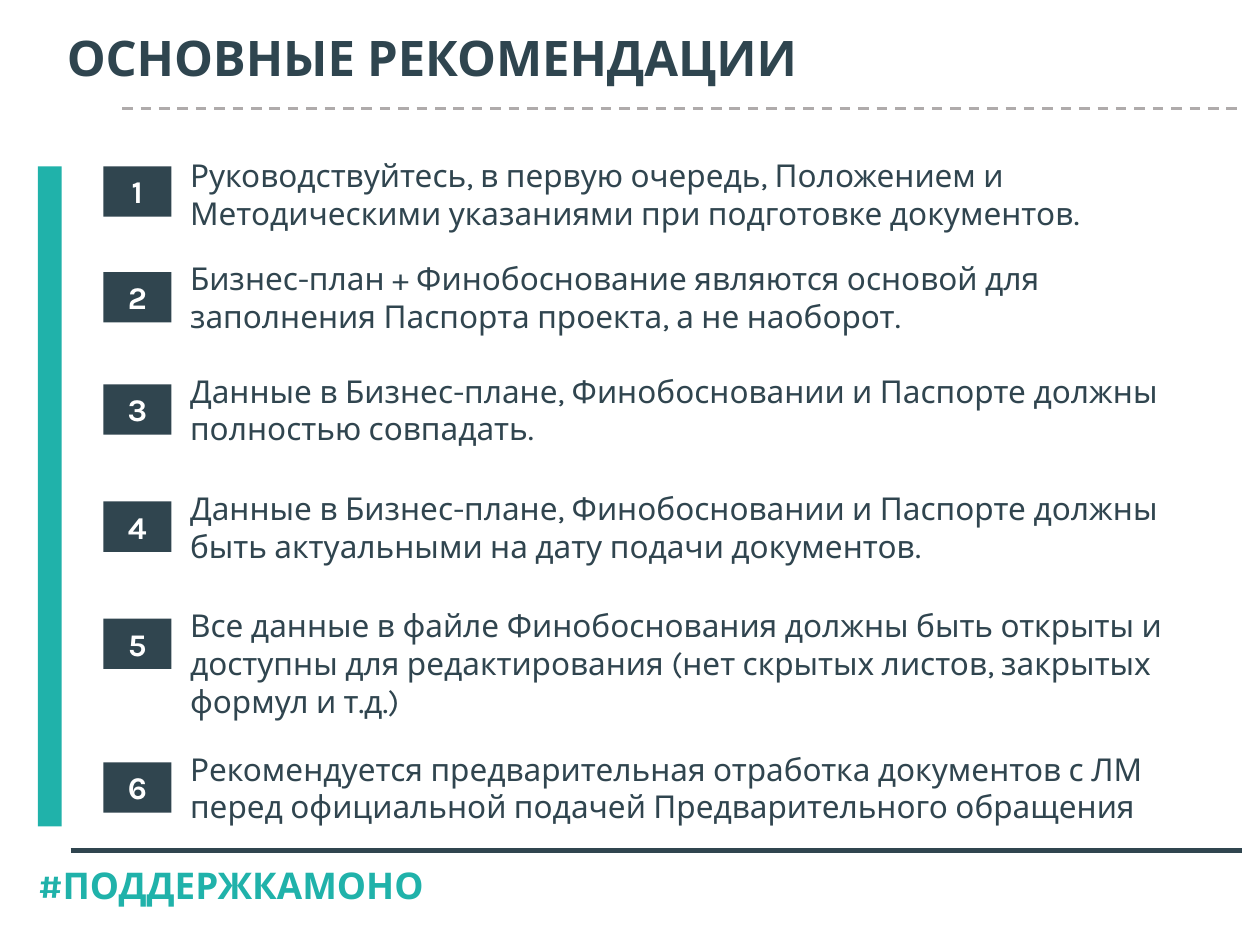
from pptx import Presentation
from pptx.dml.color import RGBColor
from pptx.enum.dml import MSO_LINE
from pptx.enum.shapes import MSO_CONNECTOR as Conn, MSO_SHAPE as Shape
from pptx.enum.text import MSO_ANCHOR as Anchor, MSO_AUTO_SIZE as Fit, PP_ALIGN as Align
from pptx.oxml.ns import qn
from pptx.util import Inches, Pt
from lxml.etree import SubElement

# Content
TITLE = "ОСНОВНЫЕ РЕКОМЕНДАЦИИ"
TAG = "#ПОДДЕРЖКАМОНО"
# (text top, text height, badge top, text)
TIPS = [
    (1.19, 0.71, 1.32, "Руководствуйтесь, в первую очередь, Положением и "
     "Методическими указаниями при подготовке документов."),
    (2.01, 0.71, 2.16, "Бизнес-план + Финобоснование являются основой для "
     "заполнения Паспорта проекта, а не наоборот."),
    (2.9, 0.71, 3.05, "Данные в Бизнес-плане, Финобосновании и Паспорте должны "
     "полностью совпадать."),
    (3.83, 0.71, 3.98, "Данные в Бизнес-плане, Финобосновании и Паспорте должны "
     "быть актуальными на дату подачи документов."),
    (4.76, 1.01, 4.91, "Все данные в файле Финобоснования должны быть открыты и "
     "доступны для редактирования (нет скрытых листов, закрытых формул и т.д.)"),
    (5.9, 0.71, 6.05, "Рекомендуется предварительная отработка документов с ЛМ "
     "перед официальной подачей Предварительного обращения"),
]

THEME = {
    "font": "Karla",
    "dark": "30454F", "title": "2F454F", "teal": "20B2AA",
    "grey": "AFABAB", "white": "FFFFFF",
    "head": 28, "tag": 21, "body": 18,
}
RIGHT = 9.86


def hue(name):
    return RGBColor.from_string(THEME[name])


def write(shape, text, size="body", color="dark", bold=False, align=Align.LEFT,
          anchor=Anchor.TOP, space=None, inset=None, wrap=True):
    frame = shape.text_frame
    frame.text = text
    frame.word_wrap = wrap
    frame.auto_size = Fit.NONE
    frame.vertical_anchor = anchor
    if inset is not None:
        frame.margin_left = frame.margin_right = Inches(inset)
        frame.margin_top = frame.margin_bottom = Inches(inset)
    para = frame.paragraphs[0]
    para.alignment = align
    if space:
        para.line_spacing = space
    font = para.runs[0].font
    font.name, font.size, font.bold = THEME["font"], Pt(THEME[size]), bold
    font.color.rgb = hue(color)


def add_box(slide, *area):
    return slide.shapes.add_textbox(*map(Inches, area))


def add_bar(slide, color, *area):
    bar = slide.shapes.add_shape(Shape.RECTANGLE, *map(Inches, area))
    bar.shadow.inherit = False
    bar.fill.solid()
    bar.fill.fore_color.rgb = hue(color)
    bar.line.fill.background()
    return bar


def add_rule(slide, left, top, color, width, dash=None):
    ends = map(Inches, (left, top, RIGHT, top))
    rule = slide.shapes.add_connector(Conn.STRAIGHT, *ends)
    rule.line.color.rgb = hue(color)
    rule.line.width = Pt(width)
    if dash:
        rule.line.dash_style = dash
    SubElement(rule._element.spPr, qn("a:effectLst"))


def main():
    deck = Presentation()
    deck.slide_width, deck.slide_height = Inches(10), Inches(7.5)
    slide = deck.slides.add_slide(deck.slide_layouts[5])

    # Title
    title = slide.shapes.title
    title.left, title.top = Inches(0.43), Inches(0.11)
    title.width, title.height = Inches(9.41), Inches(0.64)
    write(title, TITLE, size="head", color="title", bold=True,
          anchor=Anchor.MIDDLE, space=1.1)

    # Side bar, footer tag and rules
    add_bar(slide, "teal", 0.3, 1.32, 0.19, 5.24)
    write(add_box(slide, 0.3, 6.85, 9.54, 0.35), TAG, size="tag", color="teal",
          bold=True, inset=0, wrap=False)
    add_rule(slide, 0.56, 6.75, "dark", 3)
    add_rule(slide, 0.97, 0.86, "grey", 1.5, MSO_LINE.DASH)

    # Numbered tips
    for num, (top, high, mark, text) in enumerate(TIPS, 1):
        write(add_box(slide, 1.41, top, 8.28, high), text)
        badge = add_bar(slide, "dark", 0.82, mark, 0.54, 0.4)
        write(badge, str(num), color="white", bold=True, align=Align.CENTER)

    deck.save("out.pptx")


if __name__ == "__main__":
    main()
